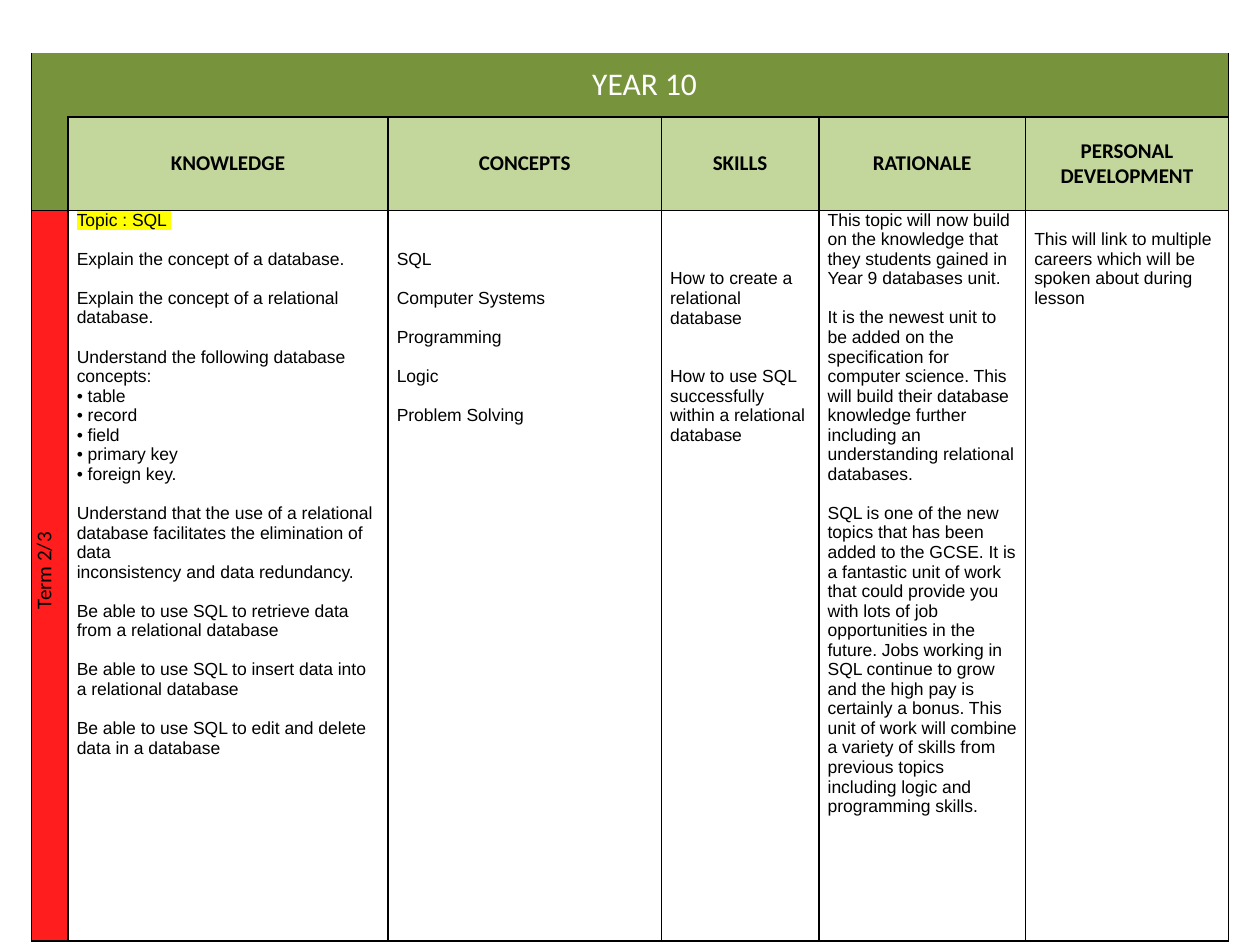
from dataclasses import dataclass

from lxml import etree
from pptx import Presentation
from pptx import util as u
from pptx.dml.color import RGBColor
from pptx.enum import text
from pptx.oxml.ns import qn


@dataclass(frozen=True)
class Theme:
    banner: str = "77933C"
    header: str = "C3D69B"
    term: str = "FF1D1D"
    paper: str = "FFFFFF"
    ink: str = "000000"
    marker: str = "FFFF00"
    heading_font: str = "Calibri"
    body_font: str = "Arial"
    banner_size: int = 18
    header_size: int = 12
    body_size: int = 10
    line_height: float = 11.2


theme = Theme()
NO_TABLE_STYLE = "{2D5ABB26-0587-4C30-8999-92F81FD0307C}"
SIDES = {"left": "a:lnL", "right": "a:lnR", "top": "a:lnT", "bottom": "a:lnB"}

YEAR = "YEAR 10 "
TERM = "Term 2/3"
TOPIC = "Topic : SQL "

# Each body paragraph is (blank lines above, wording).
COLUMNS = [
    ("KNOWLEDGE", 2.54, [
        (0, TOPIC),
        (1, "Explain the concept of a database."),
        (1, "Explain the concept of a relational database."),
        (1, "Understand the following database concepts:"),
        (0, "• table"),
        (0, "• record"),
        (0, "• field"),
        (0, "• primary key"),
        (0, "• foreign key."),
        (1, "Understand that the use of a relational"),
        (0, "database facilitates the elimination of data"),
        (0, "inconsistency and data redundancy."),
        (1, "Be able to use SQL to retrieve data from a relational database"),
        (1, "Be able to use SQL to insert data into a relational database"),
        (1, "Be able to use SQL to edit and delete data in a database"),
    ]),
    ("CONCEPTS", 2.17, [
        (2, "SQL"),
        (1, "Computer Systems"),
        (1, "Programming"),
        (1, "Logic"),
        (1, "Problem Solving"),
    ]),
    ("SKILLS", 1.25, [
        (3, "How to create a relational database"),
        (2, "How to use SQL successfully within a relational database"),
    ]),
    ("RATIONALE", 1.64, [
        (0, "This topic will now build on the knowledge that they students gained in "
            "Year 9 databases unit."),
        (1, "It is the newest unit to be added on the specification for computer science. "
            "This will build their database knowledge further including an understanding "
            "relational databases."),
        (1, "SQL is one of the new topics that has been added to the GCSE. It is a fantastic "
            "unit of work that could provide you with lots of job opportunities in the future. "
            "Jobs working in SQL continue to grow and the high pay is certainly a bonus. This "
            "unit of work will combine a variety of skills from previous topics including logic "
            "and programming skills."),
    ]),
    ("PERSONAL DEVELOPMENT", 1.61, [
        (1, "This will link to multiple careers which will be spoken about during lesson"),
    ]),
]
WIDTHS = [0.29] + [width for _, width, _ in COLUMNS]
HEIGHTS = [0.51, 0.74, 5.8]


def style_cell(cell, fill, sides=tuple(SIDES)):
    cell.margin_left = cell.margin_right = u.Inches(0.07)
    cell.margin_top = cell.margin_bottom = 0
    cell.fill.solid()
    cell.fill.fore_color.rgb = RGBColor.from_string(fill)
    properties = cell._tc.get_or_add_tcPr()
    for index, side in enumerate(side for side in SIDES if side in sides):
        line = etree.Element(qn(SIDES[side]), w=str(u.Pt(1)))
        paint = etree.SubElement(line, qn("a:solidFill"))
        etree.SubElement(paint, qn("a:srgbClr"), val=theme.ink)
        properties.insert(index, line)


def write(para, words, size, font, color=theme.ink, bold=False, align=None, highlight=None):
    para.alignment = align
    span = para.add_run()
    span.text = words
    span.font.size = u.Pt(size)
    span.font.bold = bold
    span.font.name = font
    span.font.color.rgb = RGBColor.from_string(color)
    if highlight:
        mark = etree.Element(qn("a:highlight"))
        etree.SubElement(mark, qn("a:srgbClr"), val=highlight)
        span.font._element.find(qn("a:solidFill")).addnext(mark)


def write_heading(cell, words, size=theme.header_size, **options):
    cell.vertical_anchor = text.MSO_ANCHOR.MIDDLE
    write(cell.text_frame.paragraphs[0], words, size, theme.heading_font,
          align=text.PP_ALIGN.CENTER, **options)


def write_body(cell, paragraphs):
    for index, (gap, words) in enumerate(paragraphs):
        space = u.Pt(gap * theme.line_height)
        if index == 0:
            para = cell.text_frame.paragraphs[0]
            cell.margin_top = space
        else:
            para = cell.text_frame.add_paragraph()
            para.space_before = space
        write(para, words, theme.body_size, theme.body_font,
              highlight=theme.marker if words == TOPIC else None)


def main():
    deck = Presentation()
    deck.slide_width, deck.slide_height = u.Inches(10), u.Inches(7.5)
    page = deck.slides.add_slide(deck.slide_layouts[6])
    frame = page.shapes.add_table(len(HEIGHTS), len(WIDTHS), u.Inches(0.25), u.Inches(0.42),
                                  u.Inches(sum(WIDTHS)), u.Inches(sum(HEIGHTS)))
    table = frame.table
    table.first_row = table.horz_banding = False
    table._tbl.tblPr.find(qn("a:tableStyleId")).text = NO_TABLE_STYLE
    for column, width in zip(table.columns, WIDTHS):
        column.width = u.Inches(width)
    for row, height in zip(table.rows, HEIGHTS):
        row.height = u.Inches(height)

    corner, banner, term = table.cell(0, 0), table.cell(0, 1), table.cell(2, 0)
    corner.merge(table.cell(1, 0))
    banner.merge(table.cell(0, len(COLUMNS)))
    style_cell(corner, theme.banner, sides=("left", "bottom"))
    style_cell(banner, theme.banner, sides=("right", "bottom"))
    write_heading(banner, YEAR, size=theme.banner_size, color=theme.paper)

    style_cell(term, theme.term)
    write_heading(term, TERM)
    term._tc.get_or_add_tcPr().set("vert", "vert270")
    term.text_frame.paragraphs[0]._p.get_or_add_pPr().set("marL", str(u.Inches(0.08)))

    for index, (heading, _, paragraphs) in enumerate(COLUMNS, start=1):
        header, body = table.cell(1, index), table.cell(2, index)
        style_cell(header, theme.header)
        write_heading(header, heading, bold=True)
        style_cell(body, theme.paper)
        write_body(body, paragraphs)

    deck.save("out.pptx")


if __name__ == "__main__":
    main()
